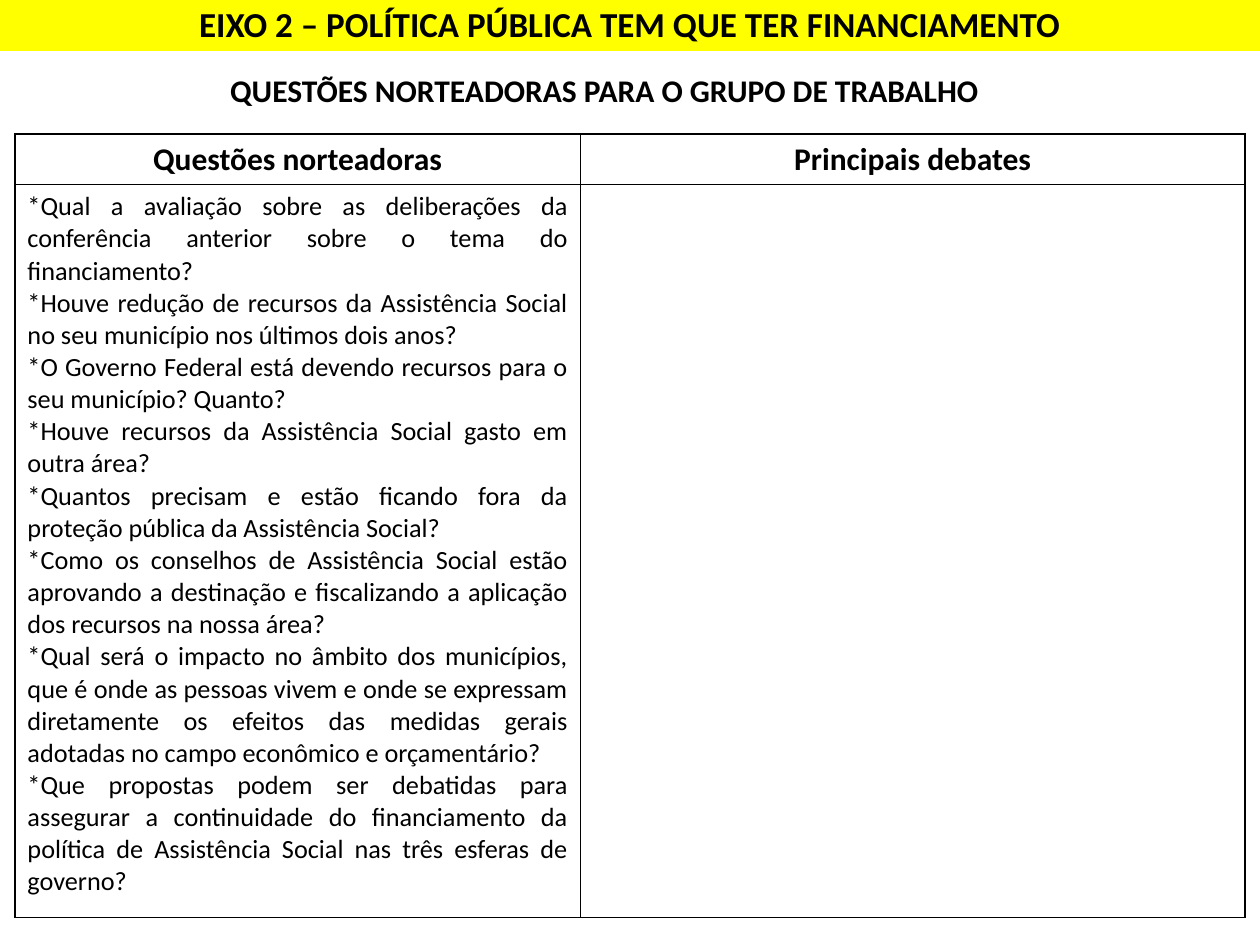
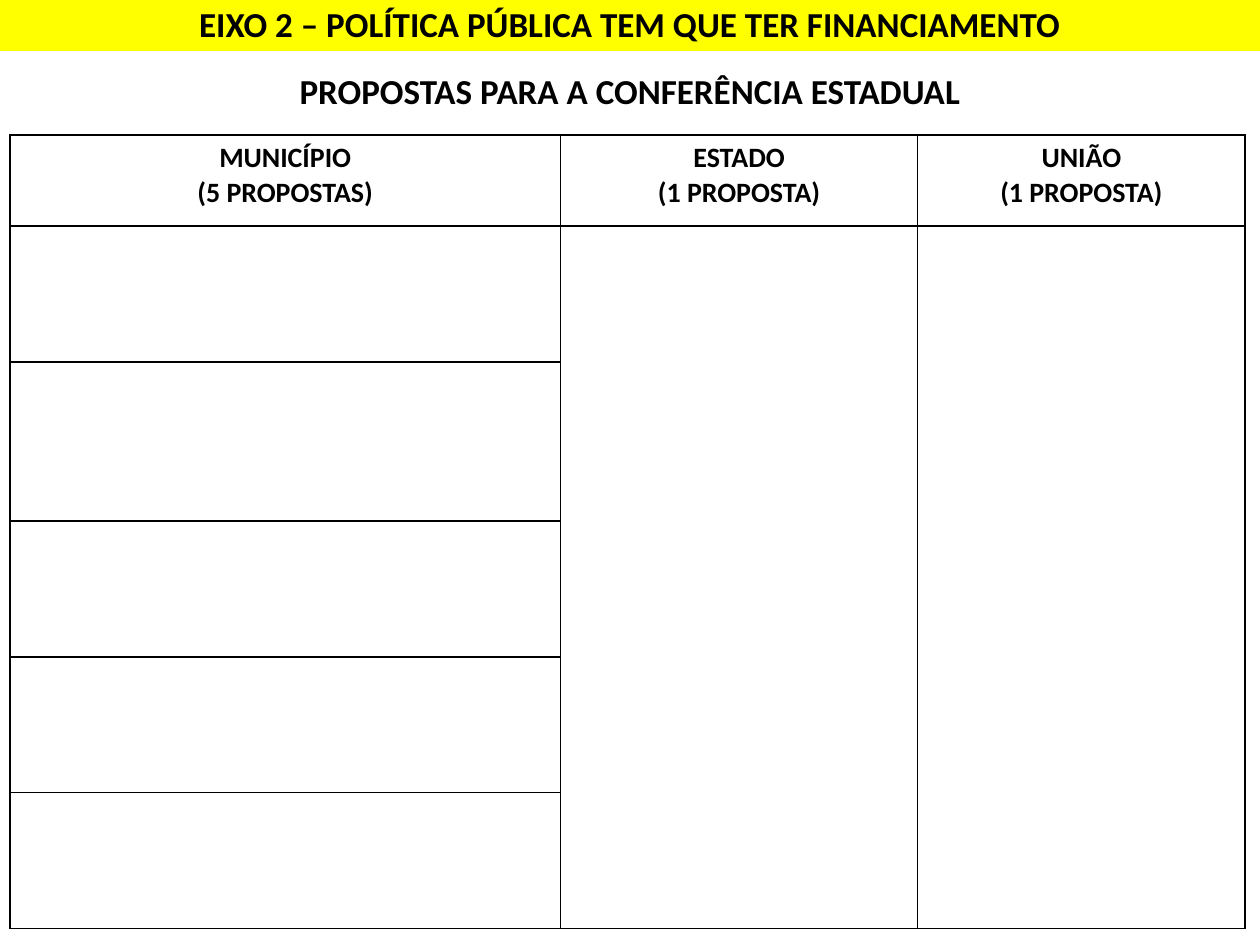
"""Build the two working-group slides on financing: guiding questions and proposals."""
from lxml import etree
from pptx import Presentation
from pptx.dml.color import RGBColor
from pptx.enum.shapes import MSO_SHAPE
from pptx.enum.text import MSO_ANCHOR, PP_ALIGN
from pptx.oxml.ns import qn
from pptx.util import Cm, Pt

RECTANGLE = MSO_SHAPE.RECTANGLE
MIDDLE = MSO_ANCHOR.MIDDLE
CENTER, JUSTIFY = PP_ALIGN.CENTER, PP_ALIGN.JUSTIFY

BLACK = RGBColor(0x00, 0x00, 0x00)
YELLOW = RGBColor(0xFF, 0xFF, 0x00)
FONT = "Calibri"
BORDER_WIDTH = Pt(1)
AXIS_TITLE = "EIXO 2 – POLÍTICA PÚBLICA TEM QUE TER FINANCIAMENTO"

QUESTIONS = [
    "*Qual a avaliação sobre as deliberações da conferência anterior sobre o tema do financiamento?",
    "*Houve redução de recursos da Assistência Social no seu município nos últimos dois anos?",
    "*O Governo Federal está devendo recursos para o seu município? Quanto?",
    "*Houve recursos da Assistência Social gasto em outra área?",
    "*Quantos precisam e estão ficando fora da proteção pública da Assistência Social?",
    "*Como os conselhos de Assistência Social estão aprovando a destinação e fiscalizando "
    "a aplicação dos recursos na nossa área?",
    "*Qual será o impacto no âmbito dos municípios, que é onde as pessoas vivem e onde se "
    "expressam diretamente os efeitos das medidas gerais adotadas no campo econômico e orçamentário?",
    "*Que propostas podem ser debatidas para assegurar a continuidade do financiamento da "
    "política de Assistência Social nas três esferas de governo?",
]

SLIDES = [
    {
        "subtitle": "QUESTÕES NORTEADORAS PARA O GRUPO DE TRABALHO",
        "subtitle_box": (4.39, 1.3, 16.61, 1.02),
        "subtitle_size": 18,
        "subtitle_align": JUSTIFY,
        "table_corner": (0.3, 2.7),
        "columns": [11.4, 13.4],
        "rows": [1.02, 14.78],
        "headers": [["Questões norteadoras"], ["Principais debates"]],
        "header_size": 18,
        "body": QUESTIONS,
        "merged_columns": [],
    },
    {
        "subtitle": "PROPOSTAS PARA A CONFERÊNCIA ESTADUAL",
        "subtitle_box": (4.2, 1.27, 17, 1.11),
        "subtitle_size": 20,
        "subtitle_align": CENTER,
        "table_corner": (0.2, 2.72),
        "columns": [11.1, 7.2, 6.6],
        "rows": [1.84, 2.74, 3.2, 2.74, 2.74, 2.74],
        "headers": [
            ["MUNICÍPIO", "(5 PROPOSTAS)"],
            ["ESTADO", "(1 PROPOSTA)"],
            ["UNIÃO", "(1 PROPOSTA)"],
        ],
        "header_size": 16,
        "body": [],
        "merged_columns": [1, 2],
    },
]


def write_lines(frame, lines, size, align=CENTER, bold=True):
    frame.word_wrap = True
    for index, line in enumerate(lines):
        para = frame.paragraphs[0] if index == 0 else frame.add_paragraph()
        para.alignment = align
        span = para.add_run()
        span.text = line
        span.font.color.rgb = BLACK
        for name, value in {"name": FONT, "size": Pt(size), "bold": bold}.items():
            setattr(span.font, name, value)


def outline_cell(cell):
    properties = cell._tc.get_or_add_tcPr()
    for side in ("a:lnL", "a:lnR", "a:lnT", "a:lnB"):
        line = etree.SubElement(properties, qn(side), w=str(BORDER_WIDTH))
        fill = etree.SubElement(line, qn("a:solidFill"))
        etree.SubElement(fill, qn("a:srgbClr"), val=str(BLACK))
    cell.fill.background()


deck = Presentation()
deck.slide_width, deck.slide_height = Cm(25.4), Cm(19.05)
blank_layout = deck.slide_layouts[6]

for content in SLIDES:
    page = deck.slides.add_slide(blank_layout)

    band = page.shapes.add_shape(RECTANGLE, 0, Cm(-0.08), deck.slide_width, Cm(1.11))
    band.shadow.inherit = False
    band.fill.solid()
    band.fill.fore_color.rgb = YELLOW
    band.line.fill.background()
    band.text_frame.vertical_anchor = MIDDLE
    write_lines(band.text_frame, [AXIS_TITLE], 20)

    subtitle = page.shapes.add_textbox(*map(Cm, content["subtitle_box"]))
    write_lines(subtitle.text_frame, [content["subtitle"]],
                content["subtitle_size"], content["subtitle_align"])

    widths, heights = content["columns"], content["rows"]
    left, top = content["table_corner"]
    table = page.shapes.add_table(len(heights), len(widths), Cm(left), Cm(top),
                                  Cm(sum(widths)), Cm(sum(heights))).table
    table.first_row = table.horz_banding = False
    for column, width in zip(table.columns, widths):
        column.width = Cm(width)
    for row, height in zip(table.rows, heights):
        row.height = Cm(height)
    for cell in table.iter_cells():
        outline_cell(cell)

    for index, header in enumerate(content["headers"]):
        write_lines(table.cell(0, index).text_frame, header, content["header_size"])
    write_lines(table.cell(1, 0).text_frame, content["body"], 15, JUSTIFY, False)
    for index in content["merged_columns"]:
        table.cell(1, index).merge(table.cell(len(heights) - 1, index))

deck.save("out.pptx")
